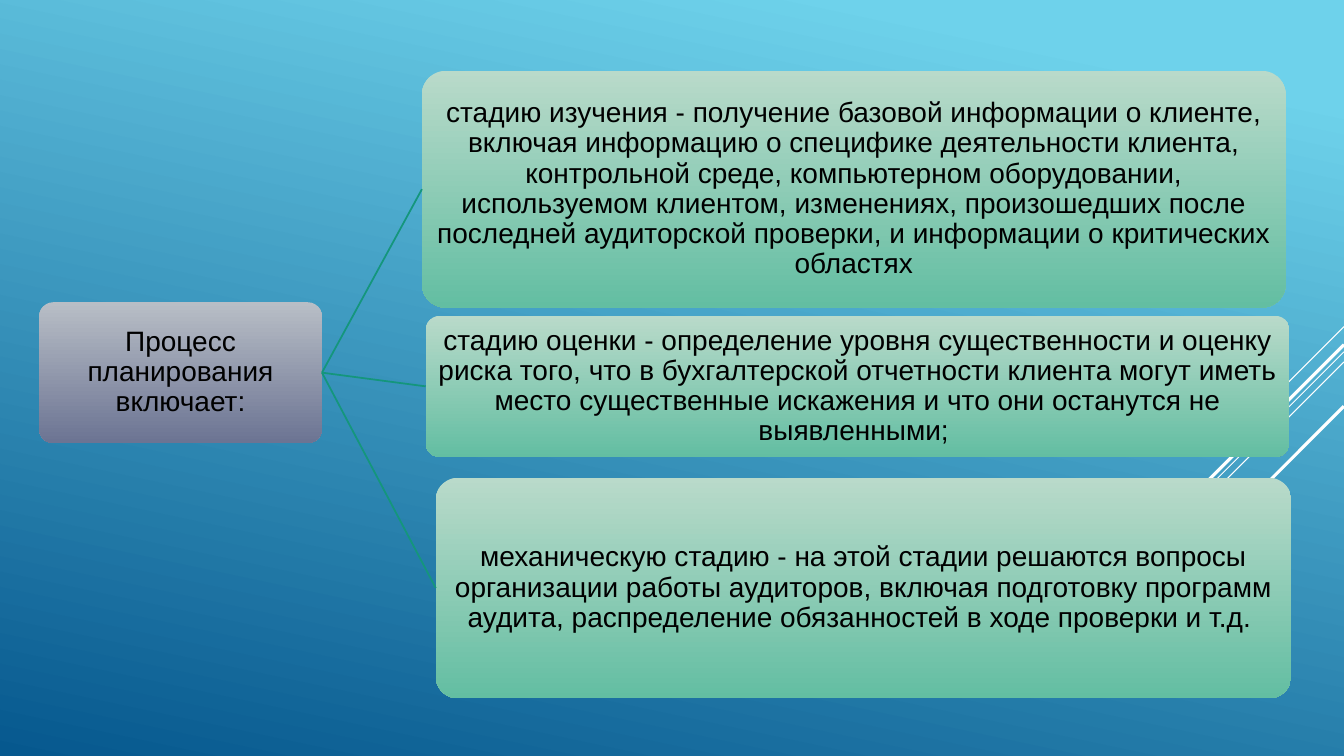
"""Build a slide that shows the three stages of the planning process."""
from pptx import Presentation
from pptx.dml.color import RGBColor
from pptx.enum import shapes, text
from pptx.oxml import ns, xmlchemy
from pptx.util import Pt

WIDTH, HEIGHT = 960, 540
COLOURS = {
    "sky": "6ED2EB", "sea": "06588E", "stripe": "FFFFFF", "link": "14967C",
    "grey": "B8BEC6", "slate": "6C7493", "mint": "B9DACA", "green": "63BEA2",
    "text": "000000",
}
STRIPES = [(233.3, 72, 0.75), (251.3, 234.7, 0.75), (258.5, 149, 0.75),
           (246.2, 137.5, 2.25), (290.2, 100.1, 2.25)]
PROCESS = ("Процесс планирования включает:", (28, 215.9, 202, 100.6))
STAGES = [
    ("стадию изучения - получение базовой информации о клиенте, включая "
     "информацию о специфике деятельности клиента, контрольной среде, "
     "компьютерном оборудовании, используемом клиентом, изменениях, "
     "произошедших после последней аудиторской проверки, и информации о "
     "критических областях", (301.4, 50.6, 617, 169.1)),
    ("стадию оценки - определение уровня существенности и оценку риска того, "
     "что в бухгалтерской отчетности клиента могут иметь место существенные "
     "искажения и что они останутся не выявленными; ",
     (304.1, 225.6, 617, 100.8)),
    ("механическую стадию - на этой стадии решаются вопросы организации "
     "работы аудиторов, включая подготовку программ аудита, распределение "
     "обязанностей в ходе проверки и т.д. ", (311.3, 341.3, 611, 157.5)),
]


def paint_gradient(fill, colours, angle, start=0):
    fill.gradient()
    fill.gradient_angle = 360 - angle
    for stop, colour, position in zip(fill.gradient_stops, colours, (start, 1)):
        stop.color.rgb = RGBColor.from_string(COLOURS[colour])
        stop.position = position


def add_line(page, start, end, colour, width):
    line = page.shapes.add_connector(
        shapes.MSO_CONNECTOR.STRAIGHT, *(Pt(value) for value in (*start, *end)))
    line.line.color.rgb = RGBColor.from_string(COLOURS[colour])
    line.line.width = Pt(width)
    properties = line._element.spPr
    properties.append(xmlchemy.OxmlElement("a:effectLst"))
    return line


def add_card(page, wording, place, colours, size=20, font="Arial"):
    card = page.shapes.add_shape(
        shapes.MSO_SHAPE.ROUNDED_RECTANGLE, *(Pt(value) for value in place))
    card.adjustments[0] = 0.1
    card.shadow.inherit = False
    card.line.fill.background()
    paint_gradient(card.fill, colours, 90)
    frame = card.text_frame
    frame.word_wrap = True
    frame.vertical_anchor = text.MSO_ANCHOR.MIDDLE
    frame.margin_left = frame.margin_right = Pt(0.7)
    frame.margin_top = frame.margin_bottom = Pt(0.7)
    para = frame.paragraphs[0]
    para.alignment = text.PP_ALIGN.CENTER
    para.line_spacing = 0.9
    span = para.add_run()
    span.text = wording
    span.font.name = font
    span.font.size = Pt(size)
    span.font.color.rgb = RGBColor.from_string(COLOURS["text"])
    return card


def main():
    deck = Presentation()
    deck.slide_width, deck.slide_height = Pt(WIDTH), Pt(HEIGHT)
    page = deck.slides.add_slide(deck.slide_layouts[6])
    paint_gradient(page.background.fill, ("sky", "sea"), 102, start=0.1)
    for top, reach, width in STRIPES:
        add_line(page, (WIDTH, top), (WIDTH - reach, top + reach), "stripe", width)
    process = add_card(page, *PROCESS, ("grey", "slate"))
    for wording, place in STAGES:
        stage = add_card(page, wording, place, ("mint", "green"))
        link = add_line(page, (0, 0), (0, 0), "link", 1.25)
        link.begin_connect(process, 3)
        link.end_connect(stage, 1)
    deck.save("out.pptx")


if __name__ == "__main__":
    main()
